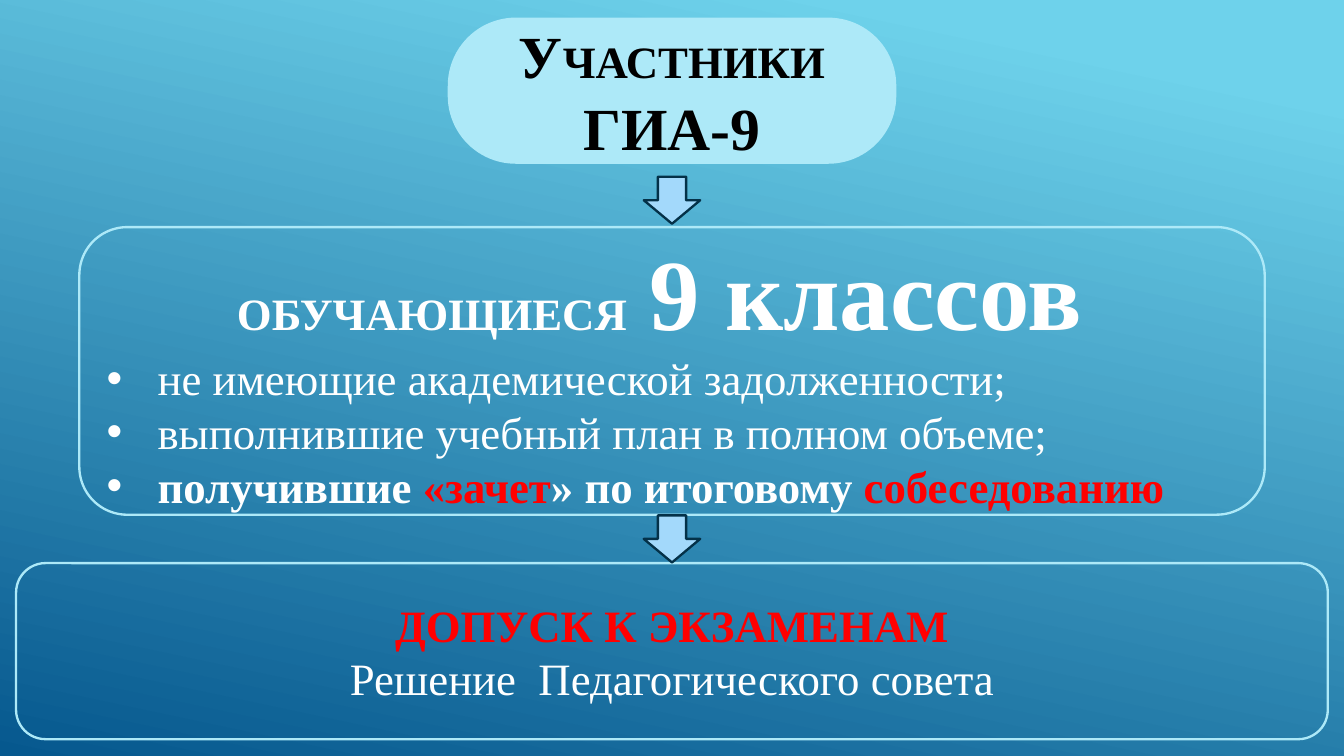
import pptx
import pptx.util
import pptx.dml.color
import pptx.enum.shapes
import pptx.enum.text
import pptx.oxml
import pptx.oxml.ns

Inches = pptx.util.Inches
Pt = pptx.util.Pt
RGBColor = pptx.dml.color.RGBColor
MSO_SHAPE = pptx.enum.shapes.MSO_SHAPE
PP_ALIGN = pptx.enum.text.PP_ALIGN

FONT = "Times New Roman"
SKY = RGBColor(0x6E, 0xD2, 0xEB)
DEEP_BLUE = RGBColor(0x06, 0x58, 0x8E)
PALE_CYAN = RGBColor(0xAD, 0xE9, 0xF8)
ARROW_FILL = RGBColor(0xA3, 0xD9, 0xFB)
ARROW_LINE = RGBColor(0x04, 0x31, 0x48)
BLACK = RGBColor(0, 0, 0)
WHITE = RGBColor(0xFF, 0xFF, 0xFF)
RED = RGBColor(0xFF, 0, 0)

SLIDE_WIDTH = 10
SLIDE_HEIGHT = SLIDE_WIDTH * 9 / 16


def paint_background(slide):
    fill = slide.background.fill
    fill.gradient()
    fill.gradient_angle = 258
    for stop, position, color in zip(fill.gradient_stops, (0.1, 1), (SKY, DEEP_BLUE)):
        stop.position = position
        stop.color.rgb = color


def add_outlined_shape(slide, kind, box, line_color, fill_color=None):
    shape = slide.shapes.add_shape(kind, *(Inches(length) for length in box))
    shape.shadow.inherit = False
    if fill_color is None:
        shape.fill.background()
    else:
        shape.fill.solid()
        shape.fill.fore_color.rgb = fill_color
    shape.line.color.rgb = line_color
    shape.line.width = Pt(1.25)
    return shape


def add_panel(slide, top, width, height, fill_color=None):
    """Add a rounded panel centred across the slide."""
    box = ((SLIDE_WIDTH - width) / 2, top, width, height)
    panel = add_outlined_shape(slide, MSO_SHAPE.ROUNDED_RECTANGLE, box, PALE_CYAN, fill_color)
    panel.text_frame.word_wrap = True
    panel.text_frame.vertical_anchor = pptx.enum.text.MSO_ANCHOR.MIDDLE
    return panel


def add_paragraph(panel, runs, color=WHITE, bold=False, bulleted=False):
    """Append a paragraph; each run is (text, size, optional own color)."""
    frame = panel.text_frame
    paragraph = frame.paragraphs[0]
    if paragraph.runs:
        paragraph = frame.add_paragraph()
    paragraph.alignment = PP_ALIGN.LEFT if bulleted else PP_ALIGN.CENTER
    paragraph.font.name = FONT
    paragraph.font.bold = bold
    for text, size, *own_color in runs:
        run = paragraph.add_run()
        run.text = text
        run.font.size = Pt(size)
        run.font.color.rgb = own_color[0] if own_color else color
    if bulleted:
        add_bullet(paragraph)


def add_bullet(paragraph):
    properties = paragraph._p.get_or_add_pPr()
    properties.set("marL", str(Inches(0.38)))
    properties.set("indent", str(-Inches(0.38)))
    namespace = pptx.oxml.ns.nsdecls("a")
    for xml in (f'<a:buFont {namespace} typeface="Arial"/>', f'<a:buChar {namespace} char="•"/>'):
        properties.insert_element_before(pptx.oxml.parse_xml(xml), "a:tabLst", "a:defRPr", "a:extLst")


def add_title(slide, top, width, height):
    panel = add_panel(slide, top, width, height, PALE_CYAN)
    panel.adjustments[0] = 0.465
    add_paragraph(panel, [("У", 32), ("ЧАСТНИКИ ", 24), ("ГИА-9", 32)], BLACK, bold=True)


def add_requirements(slide, top, width, height):
    panel = add_panel(slide, top, width, height)
    add_paragraph(panel, [("ОБУЧАЮЩИЕСЯ  ", 24), ("9 классов ", 54)], bold=True)
    for text in ("не имеющие академической задолженности;",
                 "выполнившие учебный план в полном объеме;"):
        add_paragraph(panel, [(text, 24)], bulleted=True)
    add_paragraph(panel, [("получившие ", 24), ("«зачет", 24, RED),
                          ("» по итоговому ", 24), ("собеседованию", 24, RED)],
                  bold=True, bulleted=True)


def add_admission(slide, top, width, height):
    panel = add_panel(slide, top, width, height)
    add_paragraph(panel, [("ДОПУСК К ЭКЗАМЕНАМ", 24)], RED, bold=True)
    add_paragraph(panel, [("Решение  Педагогического совета", 24)])


def add_down_arrow(slide, top):
    length, breadth = 0.35, 0.42
    box = ((SLIDE_WIDTH - length) / 2, top, length, breadth)
    arrow = add_outlined_shape(slide, MSO_SHAPE.RIGHT_ARROW, box, ARROW_LINE, ARROW_FILL)
    arrow.rotation = 90


def main():
    presentation = pptx.Presentation()
    presentation.slide_width = Inches(SLIDE_WIDTH)
    presentation.slide_height = Inches(SLIDE_HEIGHT)
    slide = presentation.slides.add_slide(presentation.slide_layouts[6])
    paint_background(slide)
    add_title(slide, 0.14, 3.32, 1.07)
    add_requirements(slide, 1.69, 8.82, 2.14)
    add_down_arrow(slide, 1.28)
    add_admission(slide, 4.19, 9.76, 1.31)
    add_down_arrow(slide, 3.8)
    presentation.save("out.pptx")


if __name__ == "__main__":
    main()
